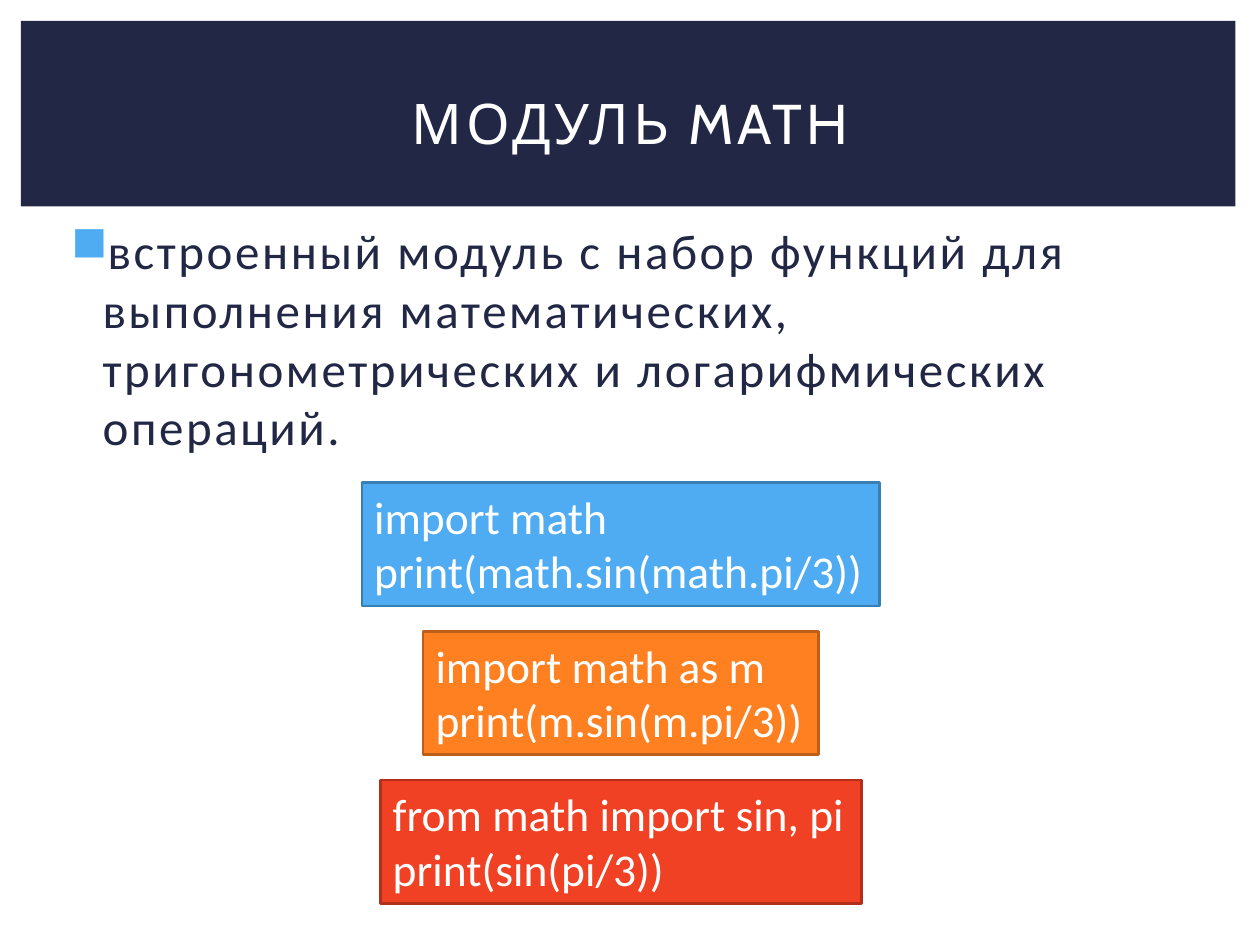
"""Builds a slide on the math module with three import styles."""
from lxml import etree
from pptx import Presentation
from pptx.dml.color import RGBColor
from pptx.enum.shapes import MSO_SHAPE
from pptx.enum.text import MSO_ANCHOR, MSO_AUTO_SIZE, PP_ALIGN
from pptx.oxml.ns import qn
from pptx.util import Pt

RECTANGLE = MSO_SHAPE.RECTANGLE
LEFT, CENTER = PP_ALIGN.LEFT, PP_ALIGN.CENTER
TOP, MIDDLE = MSO_ANCHOR.TOP, MSO_ANCHOR.MIDDLE
NO_FIT, GROW = MSO_AUTO_SIZE.NONE, MSO_AUTO_SIZE.SHAPE_TO_FIT_TEXT
TITLE_ONLY = 5


def color(value):
    return RGBColor.from_string(value)


class SlideBuilder:
    NAVY, WHITE, BLUE = "212745", "FFFFFF", "4FACF3"
    TITLE_FONT, BODY_FONT = "Cabin", "Calibri"

    def __init__(self, deck):
        self.slide = deck.slides.add_slide(deck.slide_layouts[TITLE_ONLY])

    def apply_values(self, target, values):
        for name, value in values.items():
            setattr(target, name, value)

    def add_text(self, paragraph, text, size, font, ink, spacing=0):
        run = paragraph.add_run()
        run.text = text
        self.apply_values(run.font, {"size": Pt(size), "name": font, "bold": False})
        run.font.color.rgb = color(ink)
        if spacing:
            run._r.get_or_add_rPr().set("spc", str(int(spacing * 100)))

    def rectangle(self, left, top, width, height, fill, border=None):
        box = self.slide.shapes.add_shape(
            RECTANGLE, Pt(left), Pt(top), Pt(width), Pt(height))
        box.shadow.inherit = False
        box.fill.solid()
        box.fill.fore_color.rgb = color(fill)
        if border:
            box.line.color.rgb = color(border)
            box.line.width = Pt(1.5)
        else:
            box.line.fill.background()
        return box

    def title(self, text):
        heading = self.slide.shapes.title
        band = self.rectangle(12, 12, 694, 106, self.NAVY)
        heading.element.addprevious(band.element)
        self.apply_values(heading, {"left": Pt(30), "top": Pt(28),
                                    "width": Pt(660), "height": Pt(83)})
        frame = heading.text_frame
        self.apply_values(frame, {"vertical_anchor": MIDDLE, "word_wrap": True,
                                  "auto_size": NO_FIT})
        paragraph = frame.paragraphs[0]
        paragraph.alignment = CENTER
        self.add_text(paragraph, text, 32, self.TITLE_FONT, self.WHITE, 2)

    def bullet(self, text):
        body = self.slide.shapes.add_textbox(Pt(30), Pt(122.4), Pt(662), Pt(360))
        frame = body.text_frame
        self.apply_values(frame, {"word_wrap": True, "vertical_anchor": TOP,
                                  "auto_size": NO_FIT})
        paragraph = frame.paragraphs[0]
        self.apply_values(paragraph, {"alignment": LEFT, "space_before": Pt(5.6)})
        properties = paragraph._p.get_or_add_pPr()
        properties.set("marL", str(Pt(21.6)))
        properties.set("indent", str(-Pt(18)))
        tint = etree.SubElement(properties, qn("a:buClr"))
        etree.SubElement(tint, qn("a:srgbClr"), val=self.BLUE)
        etree.SubElement(properties, qn("a:buChar"), char="■")
        self.add_text(paragraph, text, 28, self.BODY_FONT, self.NAVY, 1.5)

    def code(self, lines, center, top, width, height, fill, border):
        box = self.rectangle(center - width / 2, top, width, height, fill, border)
        frame = box.text_frame
        self.apply_values(frame, {"word_wrap": False, "vertical_anchor": TOP,
                                  "auto_size": GROW})
        for index, line in enumerate(lines):
            paragraph = frame.add_paragraph() if index else frame.paragraphs[0]
            paragraph.alignment = LEFT
            self.add_text(paragraph, line, 26, self.BODY_FONT, self.WHITE)


def main():
    deck = Presentation()
    deck.slide_width, deck.slide_height = Pt(720), Pt(540)
    builder = SlideBuilder(deck)
    builder.title("МОДУЛЬ MATH")
    builder.bullet("встроенный модуль с набор функций для выполнения "
                   "математических, тригонометрических и логарифмических операций.")
    examples = [
        (("import math", "print(math.sin(math.pi/3))"), 296, "4FACF3", "3A7FB4"),
        (("import math as m", "print(m.sin(m.pi/3))"), 226, "FF8021", "BD5F18"),
        (("from math import sin, pi", "print(sin(pi/3))"), 275, "F14124", "B2301B"),
    ]
    first_top, pitch = 275.8, 85
    for row, (lines, width, fill, border) in enumerate(examples):
        builder.code(lines, 354.8, first_top + row * pitch, width, 70.5, fill, border)
    deck.save("out.pptx")


if __name__ == "__main__":
    main()
